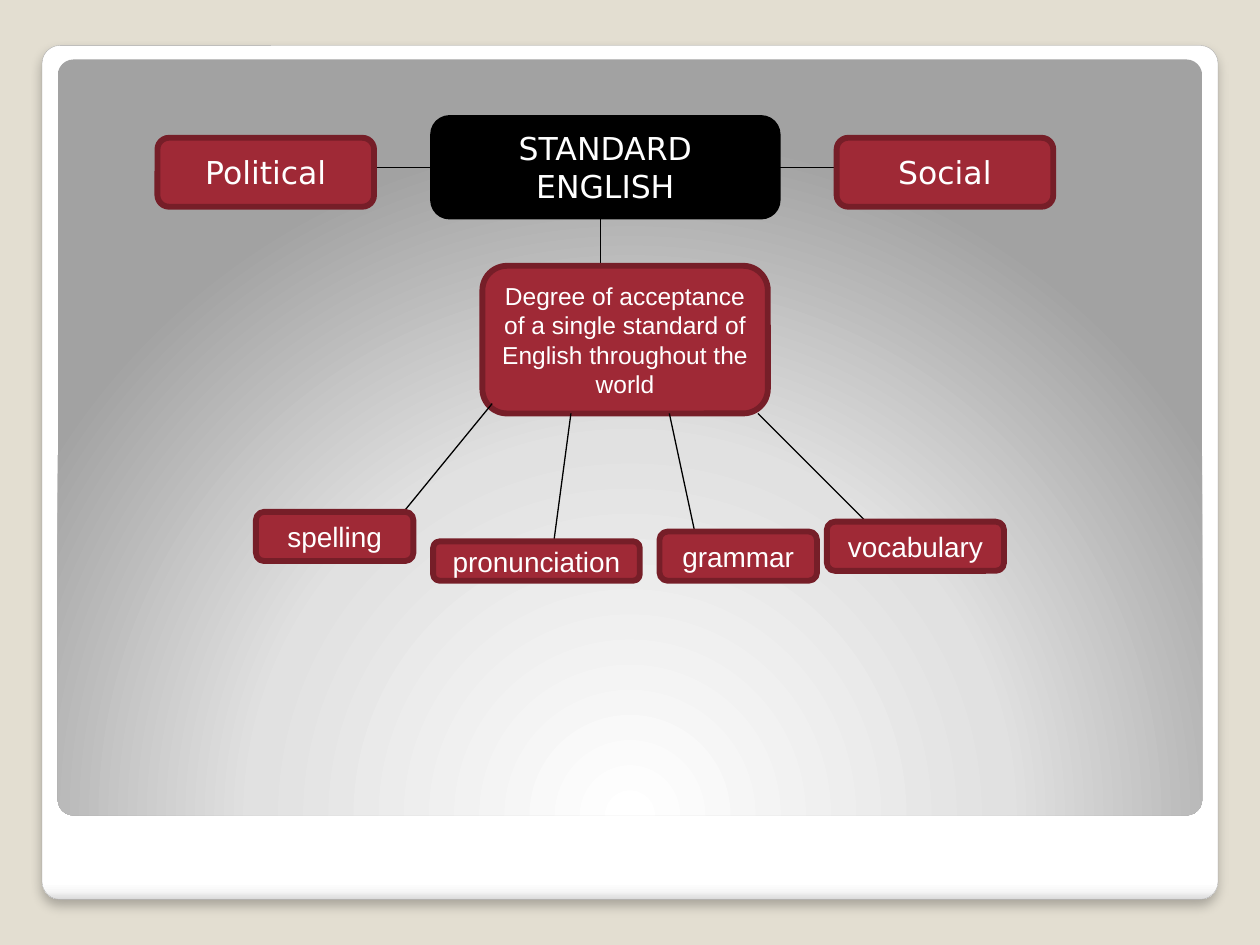
from lxml import etree
from pptx import Presentation
from pptx.dml.color import RGBColor
from pptx.enum.shapes import MSO_CONNECTOR, MSO_SHAPE
from pptx.enum.text import MSO_ANCHOR, PP_ALIGN
from pptx.oxml import parse_xml
from pptx.oxml.ns import nsdecls, qn
from pptx.util import Pt

COLORS = {name: RGBColor.from_string(value) for name, value in {
    "background": "E3DED1", "frame": "A4A4A4", "black": "000000",
    "white": "FFFFFF", "red": "9F2936", "dark red": "761E28",
}.items()}

prs = Presentation()
prs.slide_width, prs.slide_height = Pt(720), Pt(540)
s = prs.slides.add_slide(prs.slide_layouts[6])
s.background.fill.solid()
s.background.fill.fore_color.rgb = COLORS["background"]


def add_box(left, top, width, height, fill, line, text="", size=18, font="Arial"):
    sp = s.shapes.add_shape(MSO_SHAPE.ROUNDED_RECTANGLE,
                            Pt(left), Pt(top), Pt(width), Pt(height))
    sp.shadow.inherit = False
    sp.fill.solid()
    sp.fill.fore_color.rgb = COLORS[fill]
    sp.line.color.rgb = COLORS[line]
    sp.line.width = Pt(3.35)
    if text:
        tf = sp.text_frame
        tf.word_wrap = True
        tf.vertical_anchor = MSO_ANCHOR.MIDDLE
        p = tf.paragraphs[0]
        p.text = text
        p.alignment = PP_ALIGN.CENTER
        p.font.size, p.font.name = Pt(size), font
        p.font.color.rgb = COLORS["white"]
    return sp


def add_line(x1, y1, x2, y2):
    line = s.shapes.add_connector(MSO_CONNECTOR.STRAIGHT, Pt(x1), Pt(y1), Pt(x2), Pt(y2))
    line.line.color.rgb = COLORS["black"]
    line.line.width = Pt(0.75)
    etree.SubElement(line._element.spPr, qn("a:effectLst"))
    return line


# White frame and grey panel, both with gradients
frame = add_box(24, 26, 672, 488, "white", "frame")
frame.line.width = Pt(0.16)
panel = add_box(33, 34, 654, 432, "white", "frame")
panel.line.fill.background()
gradients = [
    (frame, [(0, "FFFFFF"), (98, "FFFFFF"), (99, "F7F7F7"), (100, "DADADA")],
     '<a:lin ang="5400000" scaled="0"/>'),
    (panel, [(0, "FFFFFF"), (55, "E1E1E1"), (100, "A2A2A2")],
     '<a:path path="circle"><a:fillToRect l="50000" t="175000" r="50000" b="-75000"/></a:path>'),
]
for sp, stops, direction in gradients:
    sp.adjustments[0] = 0.021
    stop_xml = "".join(f'<a:gs pos="{pos * 1000}"><a:srgbClr val="{color}"/></a:gs>'
                       for pos, color in stops)
    spPr = sp._element.spPr
    spPr.replace(spPr.find(qn("a:solidFill")), parse_xml(
        f'<a:gradFill {nsdecls("a")} rotWithShape="1"><a:gsLst>{stop_xml}</a:gsLst>'
        f'{direction}</a:gradFill>'))
frame._element.spPr.find(qn("a:effectLst")).append(parse_xml(
    f'<a:outerShdw {nsdecls("a")} blurRad="{Pt(6)}" dist="{Pt(4)}" dir="5400000" '
    'algn="t" rotWithShape="0"><a:srgbClr val="000000"><a:alpha val="25000"/>'
    '</a:srgbClr></a:outerShdw>'))

# Main topic with its two sides
root = add_box(247.5, 67.5, 196.88, 56.25, "black", "black",
               "STANDARD ENGLISH", font="DejaVu Sans")
for text, left, site, line_end in [("Social", 478.13, 3, 478.13),
                                   ("Political", 90, 1, 208.13)]:
    add_line(345, 95.63, line_end, 95.63).begin_connect(root, site)
    add_box(left, 78.75, 123.75, 39.38, "red", "dark red", text, font="DejaVu Sans")

# Central statement
add_line(343.13, 123.75, 343.13, 151.88)
add_box(275.63, 151.88, 163.13, 84.38, "red", "dark red",
        "Degree of acceptance of a single standard of English throughout the world", 14)

# Branches: text, box left, top, width, height, line start, line end
branches = [
    ("spelling", 146.25, 292.5, 90, 28.13, (281.25, 230.63), (230.63, 292.5)),
    ("pronunciation", 247.5, 309.38, 118.13, 22.5, (326.25, 236.25), (315, 320.63)),
    ("grammar", 376.88, 303.75, 90, 28.13, (382.5, 236.25), (399.38, 315)),
    ("vocabulary", 472.5, 298.13, 101.25, 28.13, (433.13, 236.25), (495, 298.13)),
]
for text, left, top, width, height, start, end in branches:
    add_line(*start, *end)
    add_box(left, top, width, height, "red", "dark red", text, 16)

prs.save("out.pptx")
